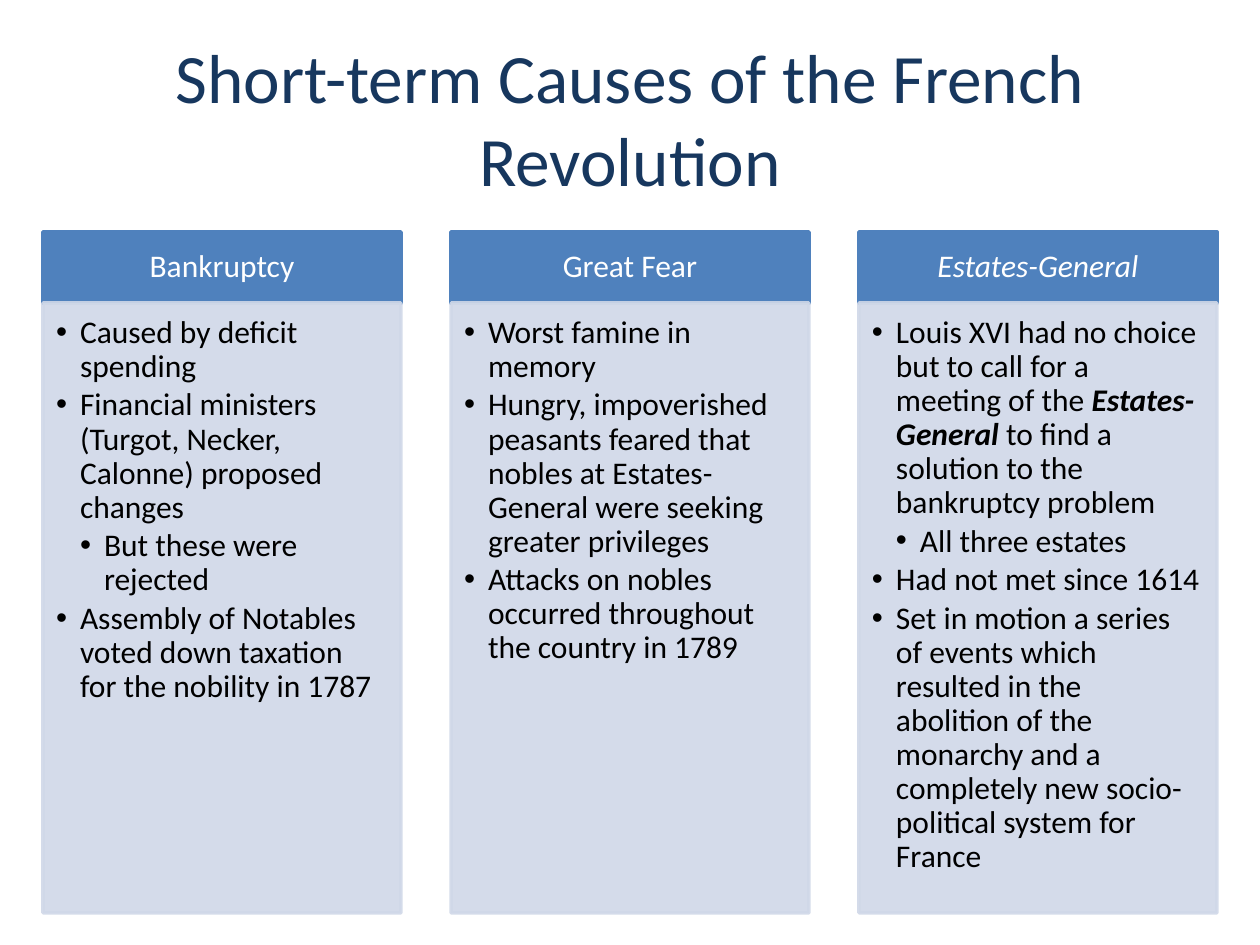
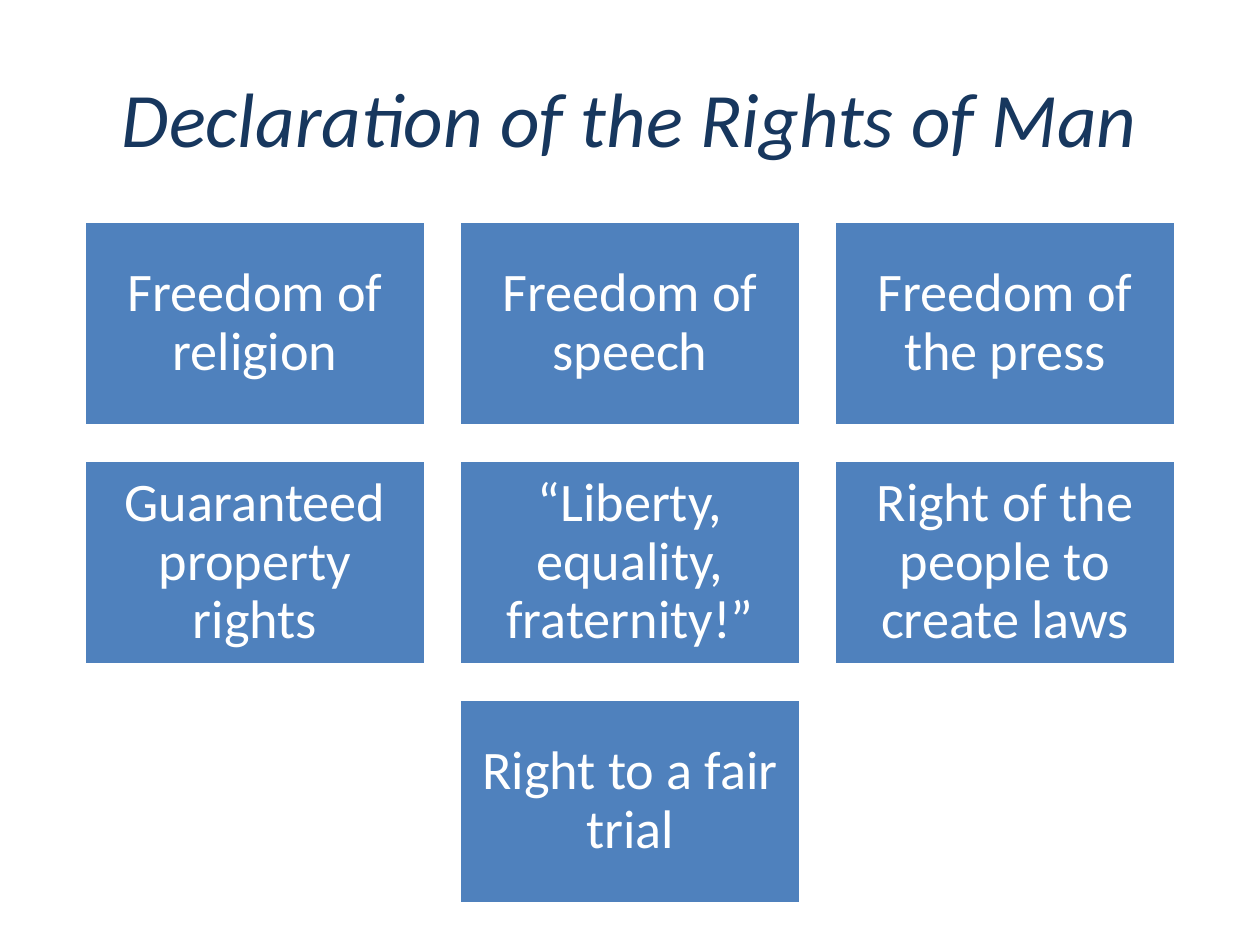
import pptx
import pptx.util
import pptx.dml.color
import pptx.enum.shapes
import pptx.enum.text
import pptx.oxml.ns
from lxml import etree

# Content: a paragraph is (level, text or list of (text, style))
CAUSES_TITLE = "Short-term Causes of the French Revolution"
CAUSES = [
    ("Bankruptcy", "", [
        (0, "Caused by deficit spending"),
        (0, "Financial ministers (Turgot, Necker, Calonne) proposed changes"),
        (1, "But these were rejected"),
        (0, "Assembly of Notables voted down taxation for the nobility in 1787"),
    ]),
    ("Great Fear", "", [
        (0, "Worst famine in memory"),
        (0, "Hungry, impoverished peasants feared that nobles at Estates-General "
            "were seeking greater privileges"),
        (0, "Attacks on nobles occurred throughout the country in 1789"),
    ]),
    ("Estates-General", "i", [
        (0, [("Louis XVI had no choice but to call for a meeting of the ", ""),
             ("Estates-General ", "bi"),
             ("to find a solution to the bankruptcy problem", "")]),
        (1, "All three estates"),
        (0, "Had not met since 1614"),
        (0, "Set in motion a series of events which resulted in the abolition of the "
            "monarchy and a completely new socio-political system for France"),
    ]),
]
RIGHTS_TITLE = "Declaration of the Rights of Man"
RIGHTS = [
    "Freedom of religion", "Freedom of speech", "Freedom of the press",
    "Guaranteed property rights", "“Liberty, equality, fraternity!”",
    "Right of the people to create laws", "Right to a fair trial",
]

# Shared look; lengths in px, 126 to the inch
SCALE = 914400 / 126
SLIDE_W, SLIDE_H = 1260, 945
FONT = "Calibri"
NAVY, BLUE, PALE, WHITE, BLACK = "17375E", "4F81BD", "D0D8E8", "FFFFFF", "000000"
TITLE_BOX = (63, 38, 1134, 158)
PER_ROW = 3
BULLET_STEP = 24

ALIGN = pptx.enum.text.PP_ALIGN
ANCHOR = pptx.enum.text.MSO_ANCHOR


def px(length):
    return pptx.util.Emu(round(length * SCALE))


def rgb(color):
    return pptx.dml.color.RGBColor.from_string(color)


def sub(parent, tag, **attributes):
    return etree.SubElement(parent, pptx.oxml.ns.qn(tag), attributes)


def add_bullet(paragraph, level):
    paragraph.level = level
    properties = paragraph._p.get_or_add_pPr()
    properties.set("marL", str(px(BULLET_STEP * (level + 1))))
    properties.set("indent", str(-px(BULLET_STEP)))
    sub(properties, "a:buFont", typeface="Arial")
    sub(properties, "a:buChar", char="•")


def write(shape, paragraphs, size, color, style="", align=ALIGN.CENTER, anchor=ANCHOR.MIDDLE,
          insets=(13, 6, 13, 6), spacing=None, after=0, bullets=False):
    """Fill a shape with text; insets run left, top, right, bottom."""
    frame = shape.text_frame
    frame.word_wrap = True
    frame.vertical_anchor = anchor
    (frame.margin_left, frame.margin_top,
     frame.margin_right, frame.margin_bottom) = map(px, insets)
    if isinstance(paragraphs, str):
        paragraphs = [(0, paragraphs)]
    for index, (level, runs) in enumerate(paragraphs):
        paragraph = frame.add_paragraph() if index else frame.paragraphs[0]
        paragraph.alignment = align
        paragraph.space_after = pptx.util.Pt(after)
        if spacing:
            paragraph.line_spacing = spacing
        if bullets:
            add_bullet(paragraph, level)
        if isinstance(runs, str):
            runs = [(runs, style)]
        for text, run_style in runs:
            run = paragraph.add_run()
            run.text = text
            run.font.name = FONT
            run.font.size = pptx.util.Pt(size)
            run.font.bold = "b" in run_style
            run.font.italic = "i" in run_style
            run.font.color.rgb = rgb(color)


def add_box(slide, box, fill, line, opacity=100):
    shape = slide.shapes.add_shape(pptx.enum.shapes.MSO_SHAPE.RECTANGLE, *map(px, box))
    shape.shadow.inherit = False
    shape.fill.solid()
    shape.fill.fore_color.rgb = rgb(fill)
    shape.line.color.rgb = rgb(line)
    shape.line.width = pptx.util.Pt(2)
    if opacity < 100:
        for color in shape._element.spPr.iter(pptx.oxml.ns.qn("a:srgbClr")):
            sub(color, "a:alpha", val=str(opacity * 1000))
    return shape


def add_slide(deck, title, **title_format):
    slide = deck.slides.add_slide(deck.slide_layouts[6])
    write(slide.shapes.add_textbox(*map(px, TITLE_BOX)), title, color=NAVY, **title_format)
    return slide


def centred_lefts(count, width, gap):
    start = (SLIDE_W - count * width - (count - 1) * gap) / 2
    return [start + i * (width + gap) for i in range(count)]


def build_causes(deck):
    slide = add_slide(deck, CAUSES_TITLE, size=39.6)
    width, gap, top, header_h, body_h = 358, 50, 232, 71, 610
    lefts = centred_lefts(len(CAUSES), width, gap)
    for left, (heading, style, points) in zip(lefts, CAUSES):
        header = add_box(slide, (left, top, width, header_h), BLUE, BLUE)
        write(header, heading, size=18, color=WHITE, style=style,
              insets=(18, 10, 18, 10), spacing=0.9)
        body = add_box(slide, (left, top + header_h, width, body_h), PALE, PALE, opacity=90)
        write(body, points, size=18, color=BLACK, align=ALIGN.LEFT, anchor=ANCHOR.TOP,
              insets=(13, 13, 17, 20), spacing=0.9, after=2.7, bullets=True)


def build_rights(deck):
    slide = add_slide(deck, RIGHTS_TITLE, size=44, style="i")
    width, height, gap, top = 341, 205, 34, 221
    for first in range(0, len(RIGHTS), PER_ROW):
        row = RIGHTS[first:first + PER_ROW]
        row_top = top + first // PER_ROW * (height + gap)
        # A short last row is centred too
        for left, right in zip(centred_lefts(len(row), width, gap), row):
            tile = add_box(slide, (left, row_top, width, height), BLUE, WHITE)
            write(tile, right, size=31, color=WHITE, insets=(16, 16, 16, 16), spacing=0.9)


def main():
    deck = pptx.Presentation()
    deck.slide_width, deck.slide_height = px(SLIDE_W), px(SLIDE_H)
    build_causes(deck)
    build_rights(deck)
    deck.save("out.pptx")


if __name__ == "__main__":
    main()
